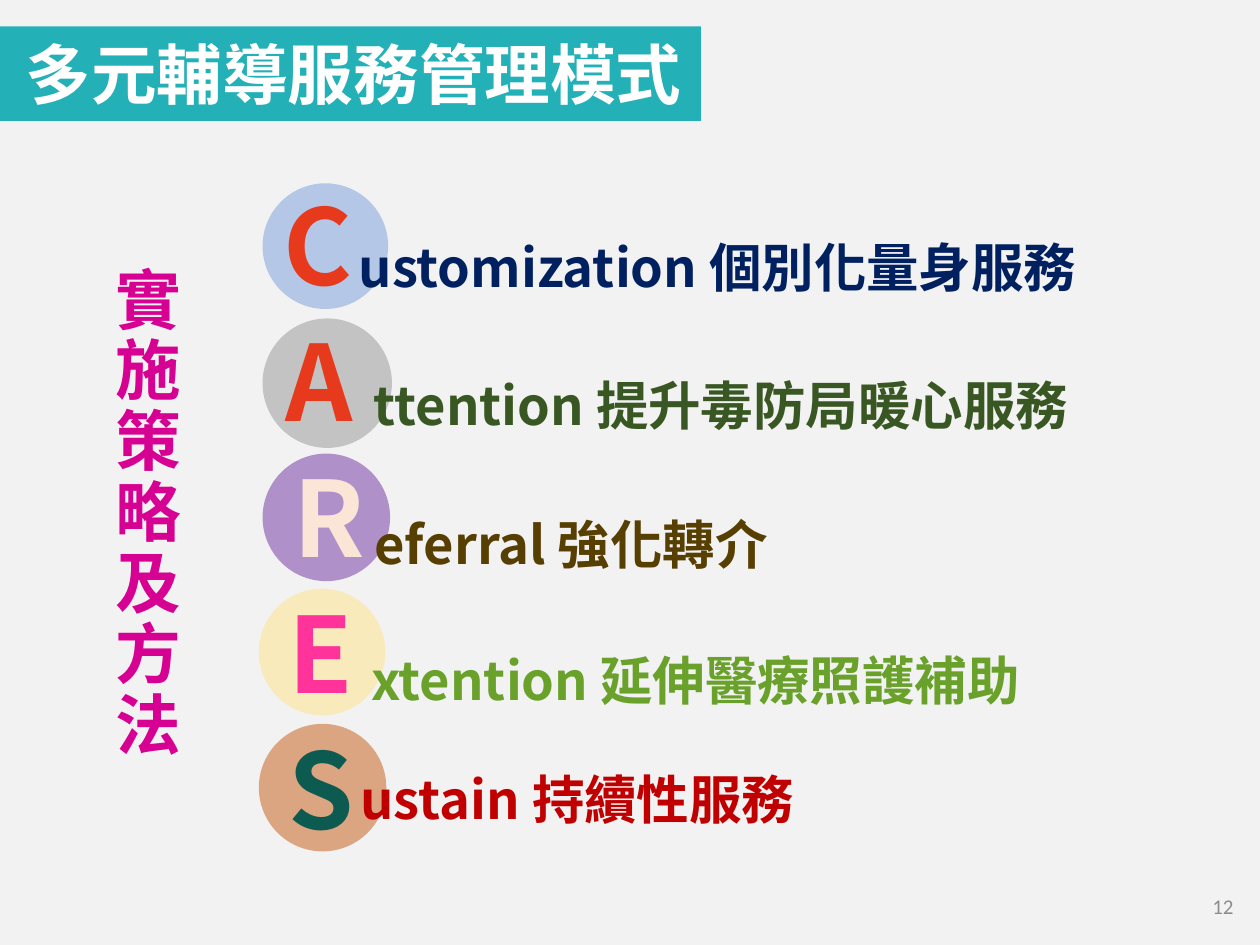
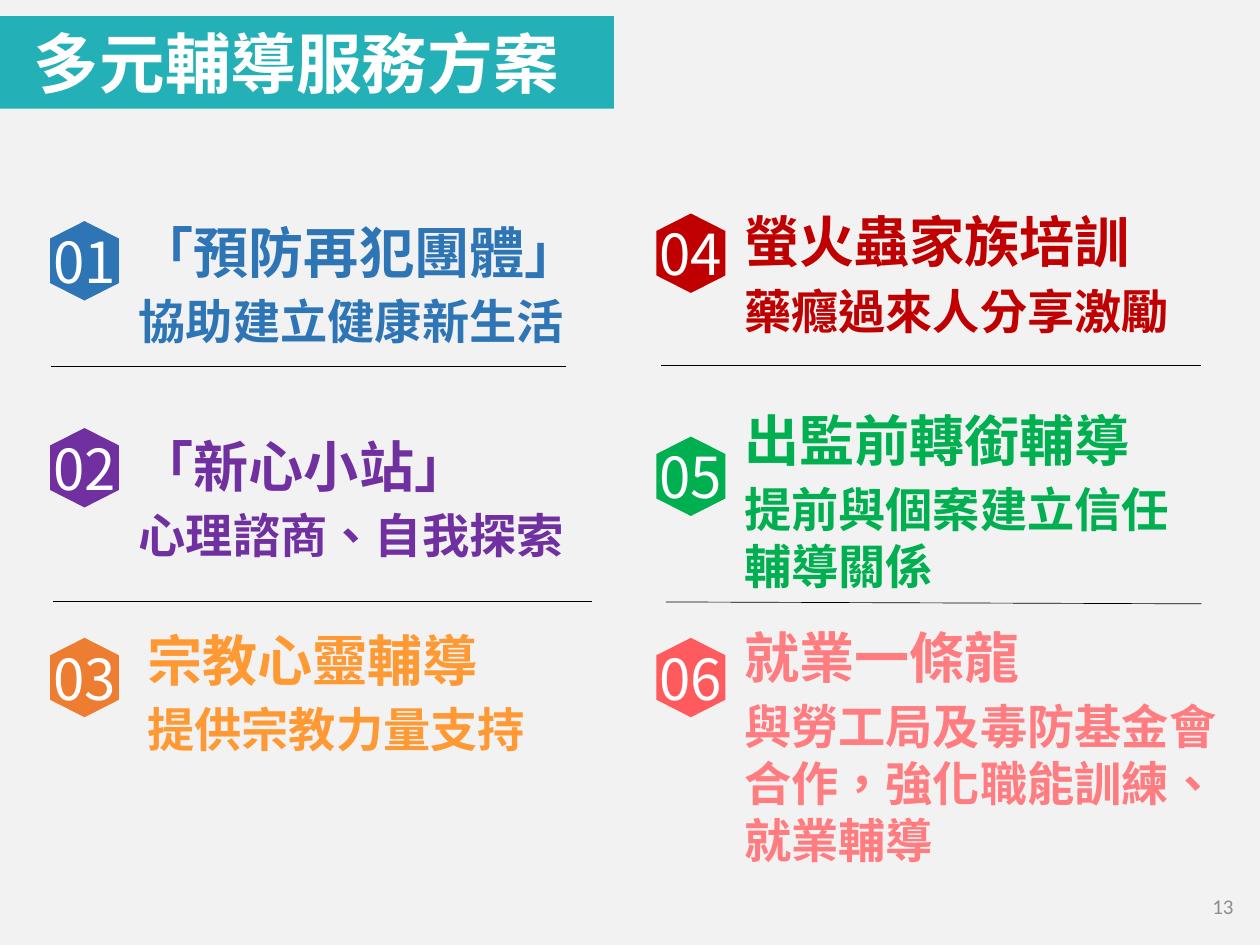
"""Build two slides on diversified counselling: the CARES strategy and its six programmes."""
from lxml import etree
from pptx import Presentation, util as u
from pptx.dml.color import RGBColor
from pptx.enum import shapes, text
from pptx.oxml.ns import qn

THEME = {
    "paper": "F2F2F2", "band": "23B0B7", "white": "FFFFFF", "rule": "000000",
    "side": "D60093", "page": "8C8C8C",
    "font": "Noto Sans CJK SC", "comma_font": "Noto Sans CJK TC", "page_font": "Calibri",
    "title_pt": 50, "initial_pt": 80, "word_pt": 40, "number_pt": 43,
    "head_pt": 42, "detail_pt": 36, "page_pt": 16, "rule_pt": 0.5,
}
SIZE = 13.34, 10
LEFT, CENTER, RIGHT = text.PP_ALIGN.LEFT, text.PP_ALIGN.CENTER, text.PP_ALIGN.RIGHT
TOP, MIDDLE = text.MSO_ANCHOR.TOP, text.MSO_ANCHOR.MIDDLE

STRATEGY = {"title": "多元輔導服務管理模式", "band": (0, 0.28, 7.42, 1), "indent": 0.27, "page": "12"}
PROGRAMME = {"title": "多元輔導服務方案", "band": (0, 0.17, 6.5, 0.98), "indent": 0.36, "page": "13"}
SIDE_HEADING = "實施策略及方法"

CARES = [
    {"initial": "C", "word": "ustomization 個別化量身服務", "colors": ("E73A1C", "002060"),
     "disc": (2.78, 1.33, "B4C7E7", 100), "initial_x": 2.9, "word_x": 3.7, "drop": 0.37},
    {"initial": "A", "word": "ttention 提升毒防局暖心服務", "colors": ("E73A1C", "385723"),
     "disc": (2.78, 1.37, "A5A5A5", 60), "initial_x": 2.93, "word_x": 3.86, "drop": 0.4},
    {"initial": "R", "word": "eferral 強化轉介", "colors": ("FBE5D6", "573E01"),
     "disc": (2.78, 1.35, "7030A0", 50), "initial_x": 3.01, "word_x": 3.87, "drop": 0.44},
    {"initial": "E", "word": "xtention 延伸醫療照護補助", "colors": ("FF3399", "69A12B"),
     "disc": (2.74, 1.34, "FFE699", 60), "initial_x": 2.96, "word_x": 3.83, "drop": 0.45},
    {"initial": "S", "word": "ustain 持續性服務", "colors": ("0D5A50", "C00000"),
     "disc": (2.74, 1.35, "C55A11", 50), "initial_x": 2.96, "word_x": 3.72, "drop": 0.27},
]
DISC_TOP, DISC_PITCH = 1.94, 1.43
INITIAL_TOP, INITIAL_PITCH = 1.86, 1.44

SERVICES = [
    {"head": "「預防再犯團體」", "detail": ["協助建立健康新生活"], "colors": ("2E75B6", "2E75B6"),
     "badge_y": 2.34, "box": (1.37, 2.26, 5, 1.5)},
    {"head": "「新心小站」", "detail": ["心理諮商", "、", "自我探索"], "colors": ("7030A0", "7030A0"),
     "badge_y": 4.53, "box": (1.37, 4.53, 5, 1.5)},
    {"head": "宗教心靈輔導", "detail": ["提供宗教力量支持"], "colors": ("ED7D31", "FF9933"),
     "badge_y": 6.75, "box": (1.46, 6.58, 4.8, 1.5)},
    {"head": "螢火蟲家族培訓", "detail": ["藥癮過來人分享激勵"], "colors": ("C00000", "C00000"),
     "badge_y": 2.26, "box": (7.78, 2.15, 5.1, 1.5)},
    {"head": "出監前轉銜輔導", "detail": ["提前與個案建立信任輔導關係"], "colors": ("00B050", "00B050"),
     "badge_y": 4.62, "box": (7.78, 4.25, 4.94, 2.1)},
    {"head": "就業一條龍", "detail": ["與勞工局及毒防基金會合作，強化職能訓練、就業輔導"],
     "colors": ("FF5B5F", "FF7C80"), "badge_y": 6.75, "box": (7.78, 6.55, 5.3, 2.71)},
]
BADGE_COLUMNS, BADGE_SIZE = (0.53, 6.95), (0.73, 0.84)
HEXAGON = [(0.5, 0), (1, 0.22), (1, 0.78), (0.5, 1), (0, 0.78), (0, 0.22)]
RULES = [(0.54, 3.88, 5.99, 3.88), (0.56, 6.36, 6.27, 6.36),
         (7, 3.87, 12.72, 3.87), (7.05, 6.37, 12.72, 6.39)]


def inches(values):
    return [u.Inches(value) for value in values]


def apply(target, values):
    for key, value in values.items():
        setattr(target, key, value)


def paint(shape, color, opacity=100):
    shape.fill.solid()
    shape.fill.fore_color.rgb = RGBColor.from_string(color)
    shape.line.fill.background()
    shape.shadow.inherit = False
    if opacity < 100:
        tint = shape._element.spPr.find(".//" + qn("a:srgbClr"))
        etree.SubElement(tint, qn("a:alpha"), val=str(opacity * 1000))


def frame_text(shape, anchor=TOP, insets=(0.1, 0.05, 0.1, 0.05), wrap=True):
    frame = shape.text_frame
    sides = ("margin_left", "margin_top", "margin_right", "margin_bottom")
    apply(frame, {"word_wrap": wrap, "auto_size": text.MSO_AUTO_SIZE.NONE,
                  "vertical_anchor": anchor, **dict(zip(sides, inches(insets)))})
    return frame


def write(paragraph, pieces, size, color, bold=True, font=THEME["font"], **layout):
    apply(paragraph, {"alignment": LEFT, **layout})
    for piece in pieces:
        run = paragraph.add_run()
        run.text = piece
        face = THEME["comma_font"] if piece == "、" else font
        apply(run.font, {"size": u.Pt(size), "bold": bold, "name": face})
        run.font.color.rgb = RGBColor.from_string(color)
        properties = run._r.get_or_add_rPr()
        properties.set("lang", "zh-TW")
        east_asian = etree.Element(qn("a:ea"), typeface=face)
        properties.find(qn("a:latin")).addnext(east_asian)


def label(slide, box, words, size, color, anchor=TOP, **layout):
    frame = frame_text(slide.shapes.add_textbox(*inches(box)), anchor)
    write(frame.paragraphs[0], [words], size, color, **layout)
    return frame


def start_slide(deck, content):
    slide = deck.slides.add_slide(deck.slide_layouts[5])
    band = slide.shapes.title
    apply(band, dict(zip(("left", "top", "width", "height"), inches(content["band"]))))
    paint(band, THEME["band"])
    frame = frame_text(band, MIDDLE, (content["indent"], 0.05, 0.1, 0.05))
    write(frame.paragraphs[0], [content["title"]], THEME["title_pt"], THEME["white"])
    label(slide, (10.16, 9.32, 3, 0.53), content["page"], THEME["page_pt"], THEME["page"],
          MIDDLE, bold=False, font=THEME["page_font"], alignment=RIGHT)
    return slide


def build_strategy(deck):
    slide = start_slide(deck, STRATEGY)
    for row, step in enumerate(CARES):
        disc_x, diameter, tint, opacity = step["disc"]
        disc_y = DISC_TOP + row * DISC_PITCH
        disc = slide.shapes.add_shape(shapes.MSO_SHAPE.OVAL,
                                      *inches((disc_x, disc_y, diameter, diameter)))
        paint(disc, tint, opacity)
        initial_color, word_color = step["colors"]
        initial_y = INITIAL_TOP + row * INITIAL_PITCH
        label(slide, (step["initial_x"], initial_y, 0.83, 1.5), step["initial"],
              THEME["initial_pt"], initial_color)
        label(slide, (step["word_x"], disc_y + step["drop"], 8.4, 0.94), step["word"],
              THEME["word_pt"], word_color, line_spacing=1.2)
    label(slide, (0.96, 2.78, 1.23, 5.4), SIDE_HEADING, THEME["title_pt"], THEME["side"],
          alignment=CENTER, line_spacing=0.9)


def add_badge(slide, left, top, number, color):
    width, height = BADGE_SIZE
    corners = [inches((left + x * width, top + y * height)) for x, y in HEXAGON]
    outline = slide.shapes.build_freeform(*corners[0])
    outline.add_line_segments(corners[1:], close=True)
    badge = outline.convert_to_shape()
    paint(badge, color)
    frame = frame_text(badge, MIDDLE, (0, 0, 0, 0), wrap=False)
    write(frame.paragraphs[0], [number], THEME["number_pt"], THEME["white"],
          bold=False, alignment=CENTER)


def add_rule(slide, ends):
    rule = slide.shapes.add_connector(shapes.MSO_CONNECTOR.STRAIGHT, *inches(ends))
    rule.line.color.rgb = RGBColor.from_string(THEME["rule"])
    rule.line.width = u.Pt(THEME["rule_pt"])
    etree.SubElement(rule._element.spPr, qn("a:effectLst"))


def build_programme(deck):
    slide = start_slide(deck, PROGRAMME)
    for ends in RULES:
        add_rule(slide, ends)
    for index, service in enumerate(SERVICES):
        badge_color, words_color = service["colors"]
        add_badge(slide, BADGE_COLUMNS[index // 3], service["badge_y"],
                  f"{index + 1:02}", badge_color)
        frame = label(slide, service["box"], service["head"], THEME["head_pt"], words_color,
                      space_after=u.Pt(6))
        write(frame.add_paragraph(), service["detail"], THEME["detail_pt"], words_color,
              space_after=u.Pt(6))


def main():
    deck = Presentation()
    deck.slide_width, deck.slide_height = inches(SIZE)
    paper = deck.slide_master.background.fill
    paper.solid()
    paper.fore_color.rgb = RGBColor.from_string(THEME["paper"])
    build_strategy(deck)
    build_programme(deck)
    deck.save("out.pptx")


if __name__ == "__main__":
    main()
